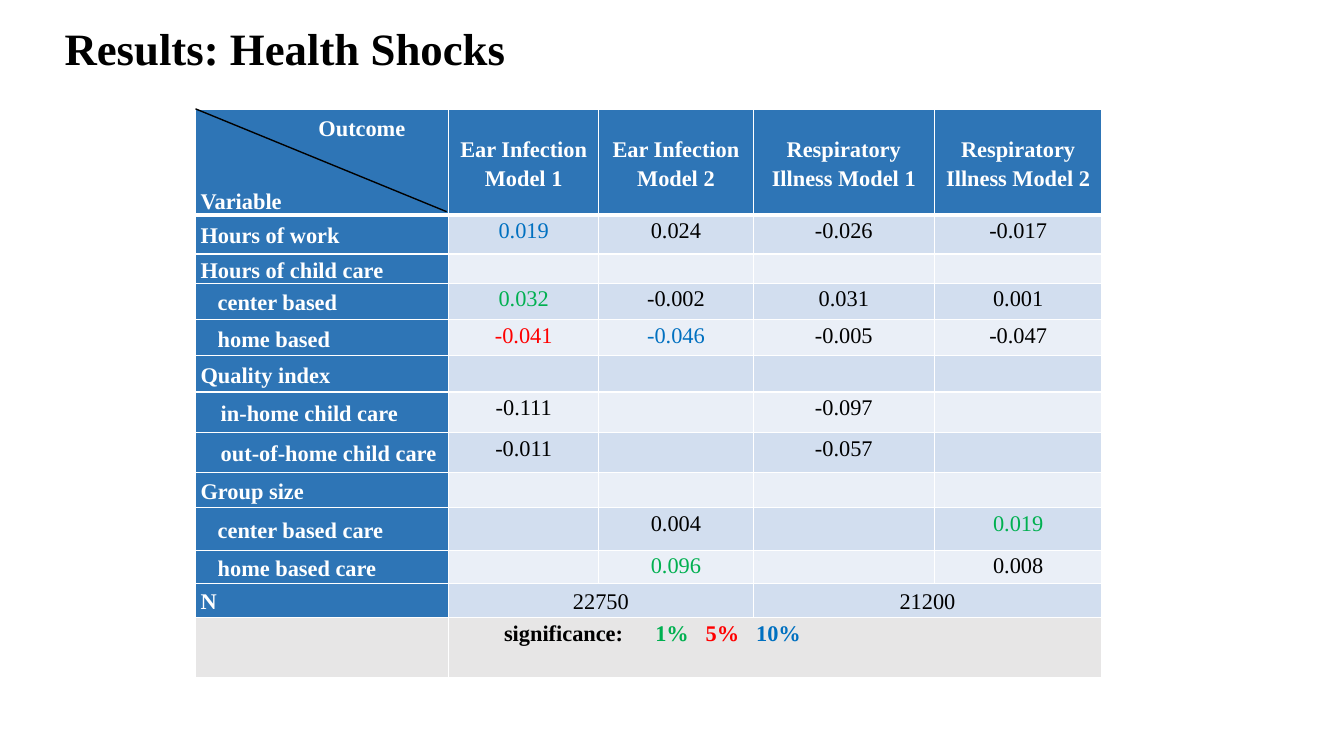
from dataclasses import dataclass, field

from lxml.etree import SubElement
from pptx import Presentation
from pptx.dml.color import RGBColor
from pptx.enum.shapes import MSO_CONNECTOR
from pptx.enum.text import MSO_ANCHOR, PP_ALIGN
from pptx.oxml.ns import qn
from pptx.util import Emu, Inches, Pt


@dataclass
class Theme:
    font: str = "Times New Roman"
    title_size: int = 32
    body_size: int = 16
    empty_size: int = 12
    line_spacing: float = 1.15
    ink: str = "000000"
    white: str = "FFFFFF"
    header: str = "2E75B6"
    bands: tuple = ("D2DEEF", "EAEFF7")
    footer: str = "E7E6E6"
    significance: dict = field(default_factory=lambda: {
        "1%": "00B050", "5%": "FF0000", "10%": "0070C0"})


THEME = Theme()

# Column widths and row heights, in percent of the slide
COLUMN_WIDTHS = [18.83, 11.18, 11.48, 13.5, 12.45]
HEADER_HEIGHT, FOOTER_HEIGHT = 13.87, 7.87
TABLE_LEFT, TABLE_TOP = 14.55, 14.53

HEADINGS = ["Variable", "Ear Infection\nModel 1", "Ear Infection\nModel 2",
            "Respiratory Illness Model 1", "Respiratory Illness Model 2"]

# Row height, indent in inches, variable, one value per model;
# a value may carry its significance level after a space
RESULTS = [
    (5.2, 0, "Hours of work", ["0.019 10%", "0.024", "-0.026", "-0.017"]),
    (3.87, 0, "Hours of child care", ["", "", "", ""]),
    (4.8, 0.17, "center based", ["0.032 1%", "-0.002", "0.031", "0.001"]),
    (4.8, 0.17, "home based", ["-0.041 5%", "-0.046 10%", "-0.005", "-0.047"]),
    (4.8, 0, "Quality index", ["", "", "", ""]),
    (5.33, 0.2, "in-home child care", ["-0.111", "", "-0.097", ""]),
    (5.33, 0.2, "out-of-home child care", ["-0.011", "", "-0.057", ""]),
    (4.67, 0, "Group size", ["", "", "", ""]),
    (5.6, 0.17, "center based care", ["", "0.004", "", "0.019 1%"]),
    (4.4, 0.17, "home based care", ["", "0.096 1%", "", "0.008"]),
    (4.53, 0, "N", ["22750", "", "21200", ""]),
]
LEGEND_TABS = [1.68, 3.09, 3.69, 4.25]


def write(frame, text, size=THEME.body_size, color=THEME.ink, bold=False,
          align=PP_ALIGN.LEFT, spacing=THEME.line_spacing, indent=0, tabs=()):
    """Fill a text frame with text, or with one line of (text, color) runs."""
    lines = [[(line, color)] for line in text.split("\n")] if isinstance(text, str) else [text]
    for index, line in enumerate(lines):
        paragraph = frame.paragraphs[0] if index == 0 else frame.add_paragraph()
        paragraph.alignment = align
        paragraph.line_spacing = spacing
        properties = paragraph._p.get_or_add_pPr()
        properties.set("marL", str(Inches(indent)))
        properties.set("indent", "0")
        if tabs:
            tab_list = SubElement(properties, qn("a:tabLst"))
            for position in tabs:
                SubElement(tab_list, qn("a:tab"), pos=str(Inches(position)), algn="l")
        for words, run_color in line:
            if not words:
                SubElement(paragraph._p, qn("a:endParaRPr"), sz=str(size * 100))
                continue
            run = paragraph.add_run()
            run.text = words
            run.font.name = THEME.font
            run.font.size = Pt(size)
            run.font.bold = bold
            run.font.color.rgb = RGBColor.from_string(run_color)


class SlideBuilder:
    """Places elements by percent of the slide's width and height."""

    def __init__(self, presentation, theme):
        self.presentation = presentation
        self.theme = theme
        self.slide = presentation.slides.add_slide(presentation.slide_layouts[5])

    def x(self, percent):
        return Emu(round(self.presentation.slide_width * percent / 100))

    def y(self, percent):
        return Emu(round(self.presentation.slide_height * percent / 100))

    def box(self, left, top, width, height):
        return self.x(left), self.y(top), self.x(width), self.y(height)

    def title(self, text, *place):
        shape = self.slide.shapes.title
        shape.left, shape.top, shape.width, shape.height = self.box(*place)
        shape.text_frame.vertical_anchor = MSO_ANCHOR.MIDDLE
        write(shape.text_frame, text, size=self.theme.title_size, bold=True, spacing=0.9)

    def label(self, text, *place):
        shape = self.slide.shapes.add_textbox(*self.box(*place))
        shape.text_frame.word_wrap = True
        write(shape.text_frame, text, color=self.theme.white, bold=True, spacing=1.0)

    def line(self, left, top, right, bottom):
        connector = self.slide.shapes.add_connector(
            MSO_CONNECTOR.STRAIGHT, self.x(left), self.y(top), self.x(right), self.y(bottom))
        connector.line.color.rgb = RGBColor.from_string(self.theme.ink)
        connector.line.width = Pt(1)
        SubElement(connector._element.spPr, qn("a:effectLst"))

    def table(self, left, top, widths, heights):
        frame = self.slide.shapes.add_table(
            len(heights), len(widths), *self.box(left, top, sum(widths), sum(heights)))
        table = frame.table
        table.first_row = table.horz_banding = False
        for column, width in zip(table.columns, widths):
            column.width = self.x(width)
        for row, height in zip(table.rows, heights):
            row.height = self.y(height)
        return table

    def cell(self, cell, text, fill, anchor=MSO_ANCHOR.TOP, top=1, bottom=1, **text_format):
        cell.margin_left = cell.margin_right = Inches(0.05)
        cell.margin_top = cell.margin_bottom = 0
        cell.vertical_anchor = anchor
        properties = cell._tc.get_or_add_tcPr()
        for side, width in (("L", 1), ("R", 1), ("T", top), ("B", bottom)):
            border = SubElement(properties, qn(f"a:ln{side}"), w=str(Pt(width)))
            border_fill = SubElement(border, qn("a:solidFill"))
            SubElement(border_fill, qn("a:srgbClr"), val=self.theme.white)
        cell.fill.solid()
        cell.fill.fore_color.rgb = RGBColor.from_string(fill)
        if not text:
            text_format["size"] = self.theme.empty_size
        write(cell.text_frame, text, **text_format)


def main():
    presentation = Presentation()
    presentation.slide_width, presentation.slide_height = Inches(13.33), Inches(7.5)
    builder = SlideBuilder(presentation, THEME)
    builder.title("Results: Health Shocks", 4.05, 2, 86.27, 9.47)

    heights = [HEADER_HEIGHT, *(result[0] for result in RESULTS), FOOTER_HEIGHT]
    table = builder.table(TABLE_LEFT, TABLE_TOP, COLUMN_WIDTHS, heights)
    heading_format = {"color": THEME.white, "bold": True}

    # Header row
    for column, heading in enumerate(HEADINGS):
        corner = column == 0
        builder.cell(table.cell(0, column), heading, THEME.header, bottom=3,
                     anchor=MSO_ANCHOR.BOTTOM if corner else MSO_ANCHOR.MIDDLE,
                     align=PP_ALIGN.LEFT if corner else PP_ALIGN.CENTER, **heading_format)

    # Result rows, in alternating bands
    last = len(RESULTS)
    for row, (_, indent, variable, values) in enumerate(RESULTS, start=1):
        top = 3 if row == 1 else 1
        builder.cell(table.cell(row, 0), variable, THEME.header, anchor=MSO_ANCHOR.MIDDLE,
                     top=top, indent=indent, **heading_format)
        for column, value in enumerate(values, start=1):
            number, _, level = value.partition(" ")
            builder.cell(table.cell(row, column), number, THEME.bands[(row - 1) % 2], top=top,
                         anchor=MSO_ANCHOR.MIDDLE if row == last else MSO_ANCHOR.TOP,
                         color=THEME.significance.get(level, THEME.ink), align=PP_ALIGN.CENTER)
    for column in (1, 3):
        table.cell(last, column).merge(table.cell(last, column + 1))

    # Significance legend
    legend = [("\tsignificance:", THEME.ink)]
    legend += [(f"\t{level}", color) for level, color in THEME.significance.items()]
    for column in range(len(COLUMN_WIDTHS)):
        builder.cell(table.cell(last + 1, column), "" if column != 1 else legend, THEME.footer,
                     bold=True, tabs=LEGEND_TABS if column == 1 else ())
    table.cell(last + 1, 1).merge(table.cell(last + 1, 4))

    # Split corner cell
    builder.line(TABLE_LEFT, 14.4, 33.23, 28)
    builder.label("Outcome", 22.96, 14.4, 11.33, 4.93)

    presentation.save("out.pptx")


if __name__ == "__main__":
    main()
